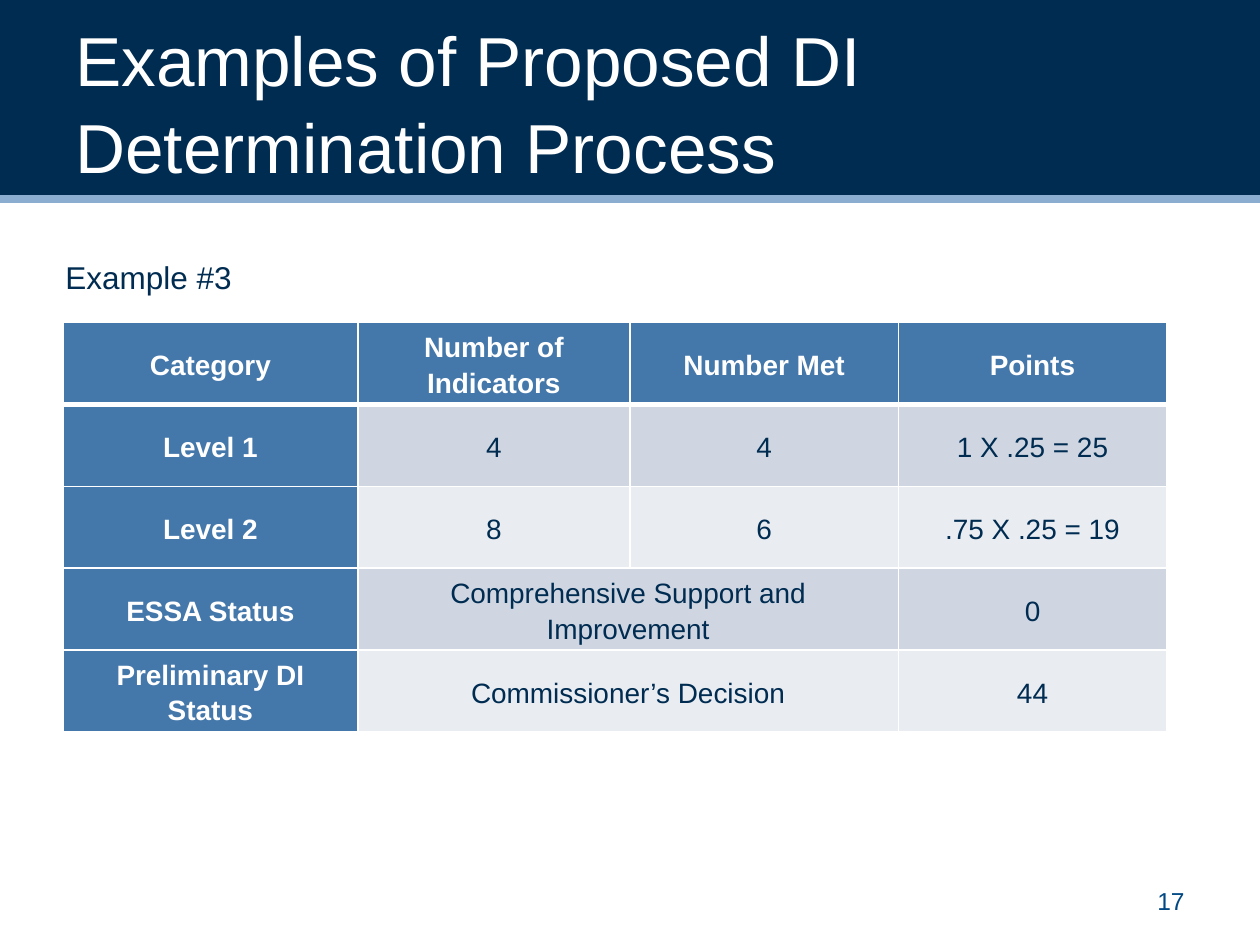
from lxml import etree
from pptx import Presentation, util as u
from pptx.dml.color import RGBColor
from pptx.enum import shapes, text
from pptx.oxml.ns import qn

HUES = {"navy": "002C51", "blue": "4477AA", "sky": "8AADD0", "page": "004884",
        "odd": "CFD6E2", "even": "E9ECF1", "white": "FFFFFF"}
WIDE, HIGH = 10, 7.5
BAND = 1.58
COLS = [2.34, 2.16, 2.13, 2.13]
ROW = 0.65
ROWS = [
    ["Category", "Number of Indicators", "Number Met", "Points"],
    ["Level 1", "4", "4", "1 X .25 = 25"],
    ["Level 2", "8", "6", ".75 X .25 = 19"],
    ["ESSA Status", "Comprehensive Support and Improvement", None, "0"],
    ["Preliminary DI Status", "Commissioner’s Decision", None, "44"],
]


def hue(name):
    return RGBColor.from_string(HUES[name])


def write(frame, words, size, color, bold=False, align="LEFT", space=1.0):
    frame.word_wrap = True
    para = frame.paragraphs[0]
    para.alignment = text.PP_ALIGN[align]
    para.line_spacing = space
    run = para.add_run()
    run.text = words
    run.font.name, run.font.size, run.font.bold = "Arial", u.Pt(size), bold
    run.font.color.rgb = hue(color)


deck = Presentation()
deck.slide_width, deck.slide_height = u.Inches(WIDE), u.Inches(HIGH)
slide = deck.slides.add_slide(deck.slide_layouts[6])

# Header band and its rule
band = slide.shapes.add_shape(shapes.MSO_SHAPE.RECTANGLE, 0, 0,
                              deck.slide_width, u.Inches(BAND))
band.shadow.inherit = False
band.fill.solid()
band.fill.fore_color.rgb = hue("navy")
band.line.fill.background()

rule = slide.shapes.add_connector(shapes.MSO_CONNECTOR.STRAIGHT, 0, u.Inches(BAND),
                                  deck.slide_width, u.Inches(BAND))
rule.line.color.rgb = hue("sky")
rule.line.width = u.Pt(4.5)
etree.SubElement(rule._element.spPr, qn("a:effectLst"))

# Title, caption and page number
LABELS = [
    ("Examples of Proposed DI Determination Process", (0.5, 0.17, 9, 1.25), "MIDDLE",
     dict(size=39.6, color="white", space=1.05)),
    ("Example #3", (0.42, 2, 6.67, 0.4), "TOP", dict(size=18, color="navy")),
    ("17", (7.17, 6.95, 2.33, 0.4), "MIDDLE",
     dict(size=14, color="page", align="RIGHT")),
]
for words, place, anchor, style in LABELS:
    frame = slide.shapes.add_textbox(*map(u.Inches, place)).text_frame
    frame.vertical_anchor = text.MSO_ANCHOR[anchor]
    write(frame, words, **style)

# Score table
table = slide.shapes.add_table(
    len(ROWS), len(COLS), u.Inches(0.5), u.Inches(2.56),
    u.Inches(sum(COLS)), u.Inches(ROW * len(ROWS))).table
table.first_col = True
for col, width in zip(table.columns, COLS):
    col.width = u.Inches(width)

for r, line in enumerate(ROWS):
    table.rows[r].height = u.Inches(ROW)
    for c, words in enumerate(line):
        cell = table.cell(r, c)
        head = r == 0 or c == 0
        props = cell._tc.get_or_add_tcPr()
        for side in "LRTB":
            thick = (r == 0 and side == "B") or (r == 1 and side == "T")
            edge = etree.SubElement(props, qn(f"a:ln{side}"),
                                    w=str(u.Pt(3 if thick else 1)))
            fill = etree.SubElement(edge, qn("a:solidFill"))
            etree.SubElement(fill, qn("a:srgbClr"), val=HUES["white"])
        cell.fill.solid()
        cell.fill.fore_color.rgb = hue("blue" if head else "odd" if r % 2 else "even")
        cell.margin_left = cell.margin_right = u.Inches(0.07)
        cell.margin_top = cell.margin_bottom = 0
        cell.vertical_anchor = text.MSO_ANCHOR.MIDDLE
        if words is None:
            table.cell(r, c - 1).merge(cell)
        else:
            write(cell.text_frame, words, 16, "white" if head else "navy",
                  bold=head, align="CENTER", space=1.15)

deck.save("out.pptx")
